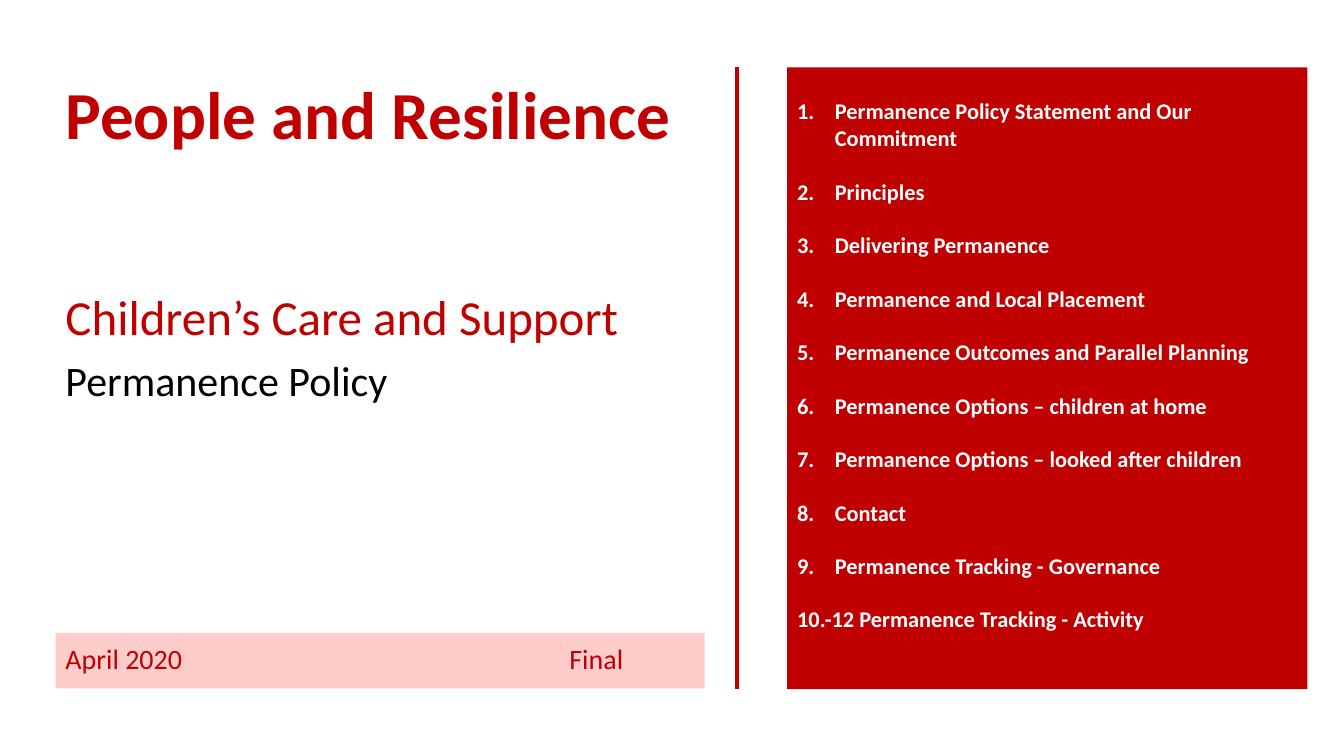
"""Build the cover slide of the Permanence Policy."""
from lxml import etree
from pptx import Presentation
from pptx import util as u
from pptx.dml.color import RGBColor
from pptx.enum import shapes, text
from pptx.oxml import ns

RED = RGBColor(0xC0, 0x00, 0x00)
PINK = RGBColor(0xFF, 0xCC, 0xCC)
WHITE = RGBColor(0xFF, 0xFF, 0xFF)
BLACK = RGBColor(0x00, 0x00, 0x00)

LEFT, TOP, WIDE = 1.4, 1.7, 16.36
BASE = 17.35
TOPICS = [
    "Permanence Policy Statement and Our Commitment",
    "Principles",
    "Delivering Permanence",
    "Permanence and Local Placement",
    "Permanence Outcomes and Parallel Planning",
    "Permanence Options – children at home",
    "Permanence Options – looked after children",
    "Contact",
    "Permanence Tracking - Governance",
]
LAST = "10.-12 Permanence Tracking - Activity"


def apply(item, values):
    for name, value in values.items():
        setattr(item, name, value)


class Cover:
    face = "Calibri"
    inset = {"margin_left": u.Cm(0.25), "margin_right": u.Cm(0.25),
             "margin_top": u.Cm(0.13), "margin_bottom": u.Cm(0.13),
             "word_wrap": True, "auto_size": text.MSO_AUTO_SIZE.NONE}

    def __init__(self, deck):
        self.slide = deck.slides.add_slide(deck.slide_layouts[0])
        self.title, self.body = self.slide.placeholders

    def place(self, item, *box):
        apply(item, dict(zip(("left", "top", "width", "height"), map(u.Cm, box))))

    def frame(self, item, anchor, **extra):
        apply(item.text_frame, {**self.inset, "vertical_anchor": anchor, **extra})
        return item.text_frame

    def line(self, frame, words, size, color, bold=False, space=1.0, gap=0, mark=None):
        first = not frame.text
        para = frame.paragraphs[0] if first else frame.add_paragraph()
        para.text = words
        if mark:
            mark(para._p.get_or_add_pPr())
        apply(para, {"alignment": text.PP_ALIGN.LEFT, "line_spacing": space,
                     "space_before": u.Pt(0 if first else gap)})
        apply(para.font, {"name": self.face, "size": u.Pt(size), "bold": bold})
        para.font.color.rgb = color

    def panel(self, color, *box):
        panel = self.slide.shapes.add_shape(
            shapes.MSO_SHAPE.RECTANGLE, *map(u.Cm, box))
        panel.shadow.inherit = False
        panel.fill.solid()
        panel.fill.fore_color.rgb = color
        panel.line.fill.background()
        return panel

    def rule(self, color, width, *ends):
        rule = self.slide.shapes.add_connector(
            shapes.MSO_CONNECTOR.STRAIGHT, *map(u.Cm, ends))
        rule.line.color.rgb = color
        rule.line.width = u.Pt(width)
        etree.SubElement(rule._element.spPr, ns.qn("a:effectLst"))


def number(props):
    apply_xml = {"marL": u.Cm(0.95), "indent": u.Cm(-0.95)}
    for name, value in apply_xml.items():
        props.set(name, str(int(value)))
    etree.SubElement(props, ns.qn("a:buFont"), typeface="+mj-lt")
    etree.SubElement(props, ns.qn("a:buAutoNum"), type="arabicPeriod")


def tab(props):
    stops = etree.SubElement(props, ns.qn("a:tabLst"))
    etree.SubElement(stops, ns.qn("a:tab"), pos=str(int(u.Cm(12.7))), algn="l")


def main():
    deck = Presentation()
    apply(deck, {"slide_width": u.Cm(33.87), "slide_height": u.Cm(19.05)})
    cover = Cover(deck)
    middle, top = text.MSO_ANCHOR.MIDDLE, text.MSO_ANCHOR.TOP

    cover.place(cover.title, LEFT, TOP, WIDE, 2.51)
    cover.line(cover.frame(cover.title, middle), "People and Resilience",
               48, RED, bold=True, space=0.9)

    cover.place(cover.body, LEFT, 7.26, WIDE, 7.98)
    names = cover.frame(cover.body, top)
    cover.line(names, "Children’s Care and Support", 35, RED, space=0.9)
    cover.line(names, "Permanence Policy", 30, BLACK, space=0.9, gap=10)

    list_box = cover.panel(RED, 19.84, TOP, 13.11, BASE + 0.02 - TOP)
    items = cover.frame(list_box, top, margin_top=u.Cm(0.76))
    for topic in TOPICS:
        cover.line(items, topic, 16, WHITE, bold=True, gap=19, mark=number)
    cover.line(items, LAST, 16, WHITE, bold=True, gap=19)

    cover.rule(RED, 2.75, 18.57, TOP, 18.57, BASE)

    strip = cover.panel(PINK, LEFT, BASE - 1.4, WIDE, 1.4)
    cover.line(cover.frame(strip, middle), "April 2020\tFinal",
               20, RED, space=0.9, mark=tab)

    deck.save("out.pptx")


if __name__ == "__main__":
    main()
